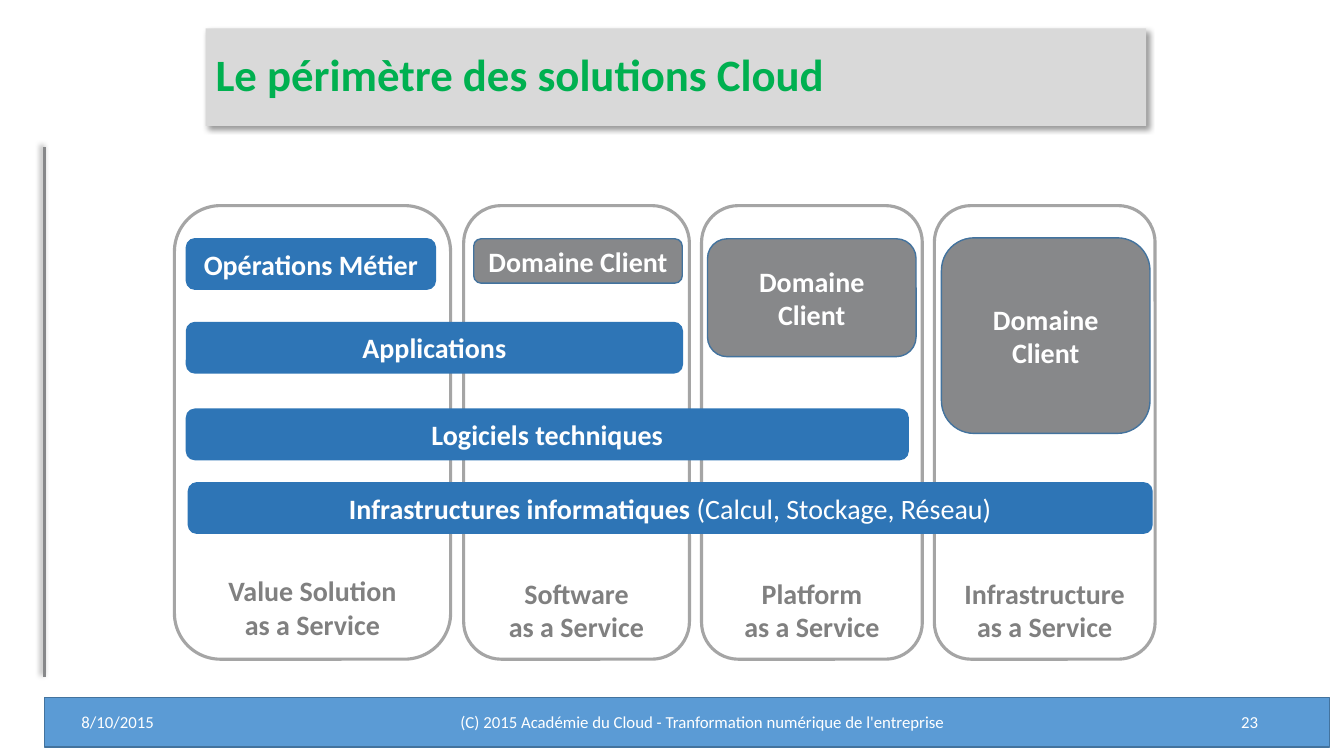
from lxml import etree
from pptx import Presentation
from pptx.dml.color import RGBColor
from pptx.enum.shapes import MSO_CONNECTOR, MSO_SHAPE
from pptx.enum.text import MSO_ANCHOR, PP_ALIGN
from pptx.oxml.ns import qn
from pptx.util import Pt

RECT, ROUND = MSO_SHAPE.RECTANGLE, MSO_SHAPE.ROUNDED_RECTANGLE
LEFT, CENTER, RIGHT = PP_ALIGN.LEFT, PP_ALIGN.CENTER, PP_ALIGN.RIGHT
MIDDLE, BOTTOM = MSO_ANCHOR.MIDDLE, MSO_ANCHOR.BOTTOM

COLORS = {
    "white": "FFFFFF", "green": "00B050", "pale": "D9D9D9", "label": "808080",
    "frame": "A5A5A5", "gray": "87888A", "edge": "43739E", "bar": "2E75B6",
    "foot": "5B9BD5", "black": "000000",
}


def color(name):
    return RGBColor.from_string(COLORS[name])


def shade(item, angle=None):
    """Replace the theme shadow by none, or by a soft one at an angle."""
    effects = etree.SubElement(item._element.spPr, qn("a:effectLst"))
    if angle is None:
        return
    outer = etree.SubElement(
        effects, qn("a:outerShdw"), blurRad=str(Pt(4)), dist=str(Pt(3)),
        dir=str(angle * 60000), algn="ctr", rotWithShape="0")
    tint = etree.SubElement(outer, qn("a:srgbClr"), val=COLORS["black"])
    etree.SubElement(tint, qn("a:alpha"), val="40000")


def write(item, text, size=20, tone="white", bold=True, align=CENTER,
          anchor=MIDDLE, space=None, plain=""):
    """Fill a shape with one paragraph; plain is a closing part not in bold."""
    frame = item.text_frame
    frame.word_wrap = True
    frame.vertical_anchor = anchor
    para = frame.paragraphs[0]
    para.alignment = align
    para.line_spacing = space
    parts = [(line, bold) for line in text.split("\n")]
    for i, (line, heavy) in enumerate(parts):
        if i:
            para.add_line_break()
        add_run(para, line, size, tone, heavy)
    if plain:
        add_run(para, plain, size, tone, False)


def add_run(para, text, size, tone, bold):
    run = para.add_run()
    run.text = text
    font = run.font
    font.name, font.size, font.bold = "Calibri", Pt(size), bold
    font.color.rgb = color(tone)


def add_box(slide, box, kind=ROUND, fill=None, line=None, width=1, angle=None):
    shape = slide.shapes.add_shape(kind, *map(Pt, box))
    if fill:
        shape.fill.solid()
        shape.fill.fore_color.rgb = color(fill)
    else:
        shape.fill.background()
    if line:
        shape.line.color.rgb = color(line)
        shape.line.width = Pt(width)
    else:
        shape.line.fill.background()
    shade(shape, angle)
    return shape


def add_rule(slide, x, top, end):
    rule = slide.shapes.add_connector(
        MSO_CONNECTOR.STRAIGHT, Pt(x), Pt(top), Pt(x), Pt(end))
    rule.line.color.rgb = color("gray")
    rule.line.width = Pt(2)
    shade(rule, 225)


def add_title(slide, box):
    title = add_box(slide, box, RECT, fill="pale", angle=45)
    write(title, "Le périmètre des solutions Cloud", size=32, tone="green",
          align=LEFT, space=0.9)


def add_footer(slide, box):
    x, y, _, _ = box
    add_box(slide, box, RECT, fill="foot", line="edge")
    # Date, notice and page number: offset, width, text, alignment
    for dx, wide, text, align in (
            (19.4, 82.8, "8/10/2015", LEFT),
            (122.4, 695.5, "(C) 2015 Académie du Cloud - Tranformation "
             "numérique de l'entreprise", CENTER),
            (836.6, 37.4, "23", RIGHT)):
        note = slide.shapes.add_textbox(
            Pt(x + dx), Pt(y + 9.4), Pt(wide), Pt(16.6))
        write(note, text, size=12, bold=False, align=align)


def add_column(slide, box, name, client=None):
    """Draw a service frame; client is the offset and height of its block."""
    x, y, _, _ = box
    frame = add_box(slide, box, line="frame", width=2.25)
    write(frame, f"{name}\nas a Service", tone="label", anchor=BOTTOM)
    if client:
        dx, dy, high = client
        block = add_box(slide, (x + dx, y + dy, 149, high),
                        fill="gray", line="edge")
        write(block, "Domaine Client")


def add_model(slide, box):
    x, y, _, high = box
    # Service columns: offset, width, name, client block
    for dx, wide, name, client in (
            (0, 197.3, "Value Solution", None),
            (206.6, 161.3, "Software", (7.2, 23.7, 31.7)),
            (376.5, 157.7, "Platform", (4.3, 23.7, 84.2)),
            (542.8, 157.7, "Infrastructure", (5.1, 23, 139.7))):
        add_column(slide, (x + dx, y, wide, high), name, client)
    # Provider layers: offsets, width, text in bold, plain text
    for dx, dy, wide, text, plain in (
            (10, 198, 688.3, "Infrastructures informatiques ",
             "(Calcul, Stockage, Réseau)"),
            (8.6, 145.4, 515.5, "Logiciels techniques", ""),
            (8.6, 83.5, 354.2, "Applications", ""),
            (8.6, 23.7, 177.8, "Opérations Métier", "")):
        layer = add_box(slide, (x + dx, y + dy, wide, 36),
                        fill="bar", line="bar")
        write(layer, text, plain=plain)


def main():
    deck = Presentation()
    deck.slide_width, deck.slide_height = Pt(960), Pt(540)
    slide = deck.slides.add_slide(deck.slide_layouts[6])
    add_footer(slide, (31.7, 498.2, 918, 35.3))
    add_rule(slide, 31.7, 105.1, 483.8)
    add_title(slide, (146.9, 20.2, 671.8, 69.8))
    add_model(slide, (124.6, 146.9, 700.5, 324))
    deck.save("out.pptx")


if __name__ == "__main__":
    main()
